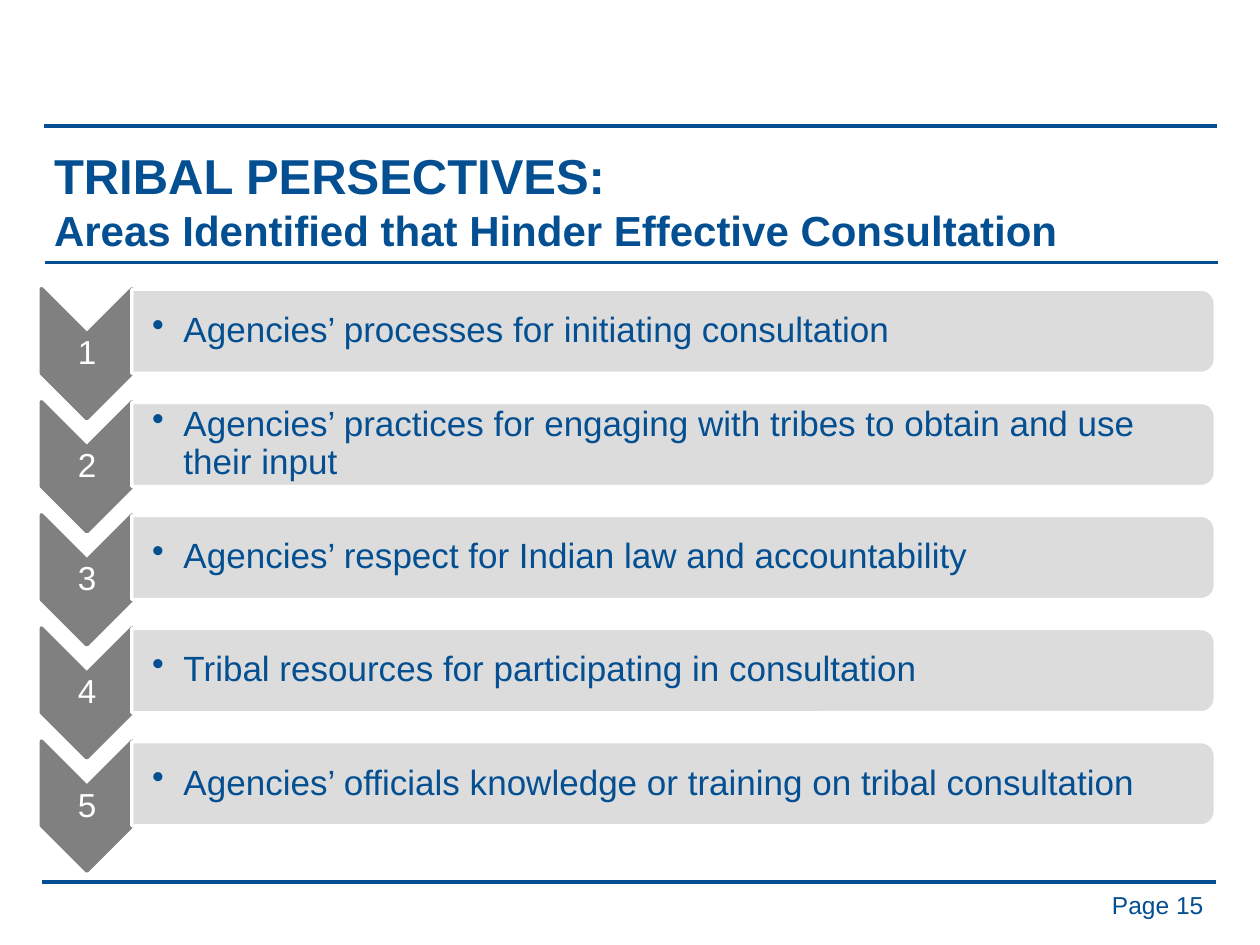
from lxml import etree
from pptx import Presentation
from pptx.dml.color import RGBColor
from pptx.enum.shapes import MSO_CONNECTOR, MSO_SHAPE
from pptx.enum.text import MSO_ANCHOR, PP_ALIGN
from pptx.oxml import parse_xml
from pptx.oxml.ns import nsdecls, qn
from pptx.util import Cm, Pt

COLORS = {"blue": "044F91", "chevron": "808080", "bar": "D9D9D9", "white": "FFFFFF"}
COLORS = {name: RGBColor.from_string(code) for name, code in COLORS.items()}

# Format values of each kind of text
FRAMES = {
    "wide": dict(margin_left=Cm(0.25), margin_right=Cm(0.25),
                 margin_top=Cm(0.13), margin_bottom=Cm(0.13)),
    "number": dict(margin_left=Cm(0.03), margin_right=Cm(0.03),
                   margin_top=Cm(0.03), margin_bottom=Cm(0.03)),
    "item": dict(margin_left=Cm(0.4), margin_right=Cm(0.03),
                 margin_top=Cm(0.03), margin_bottom=Cm(0.03)),
}
PARAGRAPHS = {
    "wide": dict(),
    "number": dict(alignment=PP_ALIGN.CENTER, line_spacing=0.9),
    "item": dict(line_spacing=0.9),
}


def add_text(kind, box, runs, color):
    """Add a text box with one paragraph; runs are (text, size, bold), a line each."""
    frame = slide.shapes.add_textbox(*map(Cm, box)).text_frame
    paragraph = frame.paragraphs[0]
    settings = dict(FRAMES[kind], word_wrap=True, vertical_anchor=MSO_ANCHOR.MIDDLE)
    for target, values in ((frame, settings), (paragraph, PARAGRAPHS[kind])):
        for name, value in values.items():
            setattr(target, name, value)
    for index, (text, size, bold) in enumerate(runs):
        if index:
            paragraph.add_line_break()
        run = paragraph.add_run()
        run.text = text
        for name, value in dict(name="Arial", size=Pt(size), bold=bold).items():
            setattr(run.font, name, value)
        run.font.color.rgb = color
    return paragraph


def add_turned_shape(preset, center_x, center_y, width, height, fill, line):
    """Add a shape around its centre, turned a quarter clockwise."""
    shape = slide.shapes.add_shape(preset, Cm(center_x - width / 2),
                                   Cm(center_y - height / 2), Cm(width), Cm(height))
    shape.rotation = 90
    shape.shadow.inherit = False
    shape.fill.solid()
    shape.fill.fore_color.rgb = COLORS[fill]
    shape.line.color.rgb = COLORS[line]
    shape.line.width = Pt(2)
    return shape


presentation = Presentation()
presentation.slide_width, presentation.slide_height = Cm(25.4), Cm(19.05)
slide = presentation.slides.add_slide(presentation.slide_layouts[6])

# Rules above the title, below the title and above the page number
for left, right, y, weight in ((0.89, 24.54, 2.54, 2.5),
                               (0.91, 24.56, 5.29, 1.5),
                               (0.84, 24.51, 17.78, 2.5)):
    rule = slide.shapes.add_connector(MSO_CONNECTOR.STRAIGHT,
                                      Cm(left), Cm(y), Cm(right), Cm(y))
    rule.line.color.rgb = COLORS["blue"]
    rule.line.width = Pt(weight)
    etree.SubElement(rule._element.spPr, qn("a:effectLst"))

# Title
add_text("wide", (0.84, 2.77, 23.67, 2.54),
         [("TRIBAL PERSECTIVES: ", 28, True),
          ("Areas Identified that Hinder Effective Consultation", 24, True)],
         COLORS["blue"])

# Numbered chevrons with their bars
AREAS = [
    "Agencies’ processes for initiating consultation",
    "Agencies’ practices for engaging with tribes to obtain and use their input",
    "Agencies’ respect for Indian law and accountability",
    "Tribal resources for participating in consultation",
    "Agencies’ officials knowledge or training on tribal consultation",
]
ROW_TOP, ROW_STEP = 5.82, 2.28
for row, area in enumerate(AREAS):
    top = ROW_TOP + row * ROW_STEP
    add_turned_shape(MSO_SHAPE.CHEVRON, 1.75, top + 1.31, 2.62, 1.83,
                     "chevron", "chevron")
    add_text("number", (0.84, top + 0.92, 1.83, 0.79),
             [(str(row + 1), 19, False)], COLORS["white"])

    bar = add_turned_shape(MSO_SHAPE.ROUND_2_SAME_RECTANGLE, 13.58, top + 0.86,
                           1.7, 21.84, "bar", "white")
    bar_color = bar._element.spPr.find(qn("a:solidFill"))[0]
    etree.SubElement(bar_color, qn("a:alpha"), val="90000")

    item = add_text("item", (2.67, top + 0.1, 21.77, 1.52),
                    [(area, 20, False)], COLORS["blue"])
    properties = item._p.get_or_add_pPr()
    properties.set("marL", str(Cm(0.63)))
    properties.set("indent", str(-Cm(0.63)))
    properties.append(parse_xml(f'<a:buChar {nsdecls("a")} char="•"/>'))

# Page number
page = add_text("wide", (18.59, 17.81, 5.92, 0.86), [("Page 15", 14, False)],
                COLORS["blue"])
page.alignment = PP_ALIGN.RIGHT

presentation.save("out.pptx")
